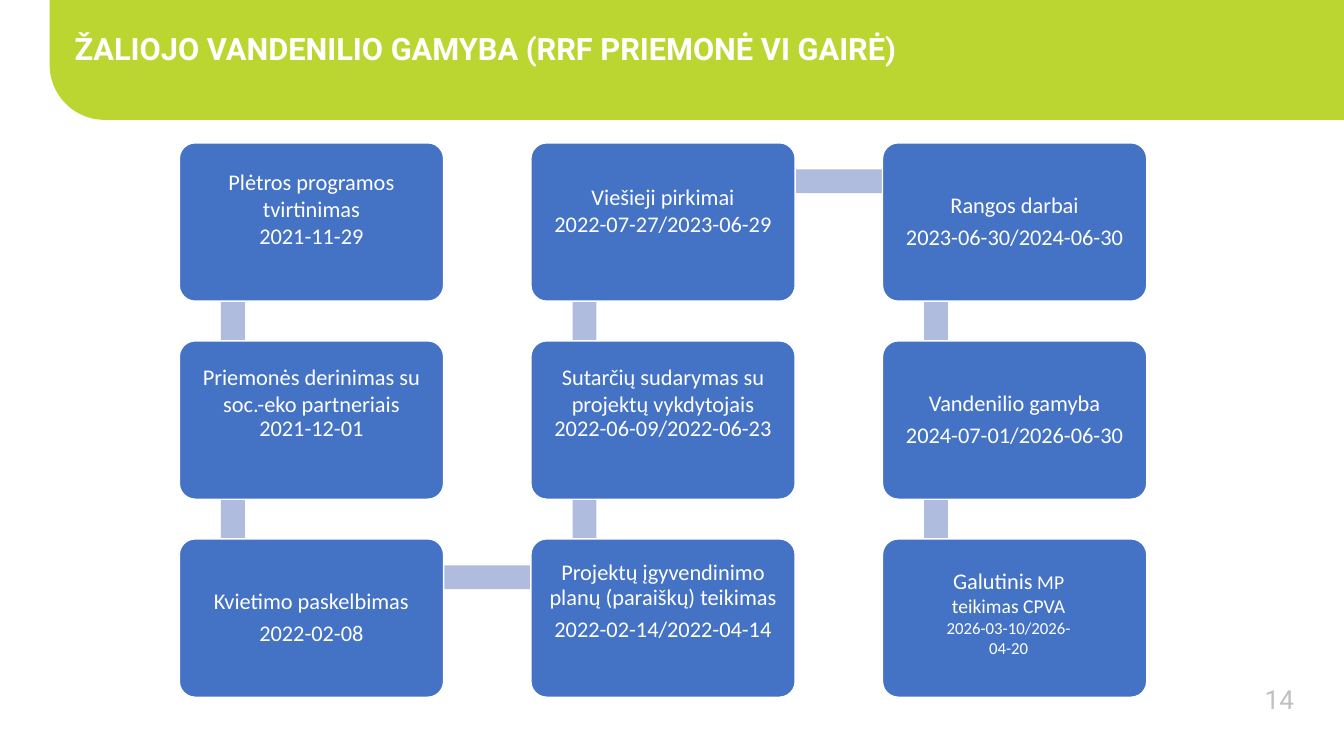
from pptx import Presentation
from pptx.dml.color import RGBColor
from pptx.enum.shapes import MSO_SHAPE
from pptx.enum.text import MSO_ANCHOR, PP_ALIGN
from pptx.util import Cm, Pt

RECT = MSO_SHAPE.RECTANGLE
ROUND = MSO_SHAPE.ROUNDED_RECTANGLE
CORNER = MSO_SHAPE.ROUND_1_RECTANGLE
TOP, MIDDLE = MSO_ANCHOR.TOP, MSO_ANCHOR.MIDDLE
LEFT, CENTER = PP_ALIGN.LEFT, PP_ALIGN.CENTER

LIME, BLUE, PALE = "BCD631", "4472C4", "B0BCDE"
WHITE, GREY = "FFFFFF", "C0C0C0"

ROWS = 3
CARD_W, CARD_H = 6.66, 3.99
STEP_X, STEP_Y = 8.86, 4.99
BAR = 0.6
PIN_X, PIN_Y = 1.35, 0.97  # where links meet inside a card
PAD = 0.18

# Title, date, tight title, tight date, extra space below (cm)
STEPS = [
    ("Plėtros programos tvirtinimas", "2021-11-29", False, False, 0.68),
    ("Priemonės derinimas su soc.-eko partneriais", "2021-12-01",
     False, True, 0.88),
    ("Kvietimo paskelbimas", "2022-02-08", True, True, 0),
    ("Projektų įgyvendinimo planų (paraiškų) teikimas",
     "2022-02-14/2022-04-14", True, True, 0.82),
    ("Sutarčių sudarymas su projektų vykdytojais", "2022-06-09/2022-06-23",
     False, True, 0.88),
    ("Viešieji pirkimai", "2022-07-27/2023-06-29", False, False, 0.62),
    ("Rangos darbai", "2023-06-30/2024-06-30", True, True, 0),
    ("Vandenilio gamyba", "2024-07-01/2026-06-30", True, True, 0),
]
# Last step: each paragraph is a list of (text, size)
FINAL = [
    [("Galutinis", 16), (" MP teikimas CPVA", 14)],
    [("2026-03-10/2026-04-20", 12)],
]


def color(code):
    return RGBColor.from_string(code)


def style(run, size, code=WHITE, font="Calibri", bold=False):
    run.font.size = Pt(size)
    run.font.name = font
    run.font.bold = bold
    run.font.color.rgb = color(code)


def inset(frame, left, top, right, bottom):
    frame.margin_left, frame.margin_top = Cm(left), Cm(top)
    frame.margin_right, frame.margin_bottom = Cm(right), Cm(bottom)


def block(slide, kind, x, y, w, h, fill):
    shape = slide.shapes.add_shape(kind, Cm(x), Cm(y), Cm(w), Cm(h))
    shape.shadow.inherit = False
    shape.fill.solid()
    shape.fill.fore_color.rgb = color(fill)
    shape.line.fill.background()
    return shape


def label(slide, x, y, w, h, text, size, code, bold, align, anchor):
    frame = slide.shapes.add_textbox(Cm(x), Cm(y), Cm(w), Cm(h)).text_frame
    frame.word_wrap = True
    frame.vertical_anchor = anchor
    frame.text = text
    para = frame.paragraphs[0]
    para.alignment = align
    style(para.runs[0], size, code, "Roboto", bold)


def header(slide, x, y, w, h):
    band = block(slide, CORNER, x, y, w, h, LIME)
    band.rotation = 180
    band.adjustments[0] = 0.459
    label(slide, x + 0.38, y + 0.63, w - 0.38, 1.2,
          "ŽALIOJO VANDENILIO GAMYBA (RRF PRIEMONĖ VI GAIRĖ)",
          22, WHITE, True, LEFT, TOP)


def card(slide, x, y):
    shape = block(slide, ROUND, x, y, CARD_W, CARD_H, BLUE)
    shape.adjustments[0] = 0.1
    shape.line.color.rgb = color(WHITE)
    shape.line.width = Pt(1)
    frame = shape.text_frame
    frame.word_wrap = True
    return frame


def stage(slide, x, y, title, date, close, snug, extra):
    frame = card(slide, x, y)
    frame.vertical_anchor = MIDDLE
    inset(frame, PAD, PAD, PAD, PAD + extra)
    frame.text = f"{title}\n{date}"
    for para, tight in zip(frame.paragraphs, (close, snug)):
        para.alignment = CENTER
        if tight:
            para.line_spacing = 0.9
            para.space_after = Pt(5.6)
        style(para.runs[0], 16)


def finish(slide, x, y):
    frame = card(slide, x, y)
    frame.vertical_anchor = TOP
    inset(frame, 1.25, 0.59, 1.55, PAD)
    for i, parts in enumerate(FINAL):
        para = frame.add_paragraph() if i else frame.paragraphs[0]
        para.alignment = CENTER
        for text, size in parts:
            run = para.add_run()
            run.text = text
            style(run, size)


def link(slide, start, end):
    """Bar between the pins of two neighbouring cards."""
    (ax, ay), (bx, by) = start, end
    wide, tall = abs(bx - ax), abs(by - ay)
    x, y = min(ax, bx) + PIN_X, min(ay, by) + PIN_Y
    if wide:
        block(slide, RECT, x, y - BAR / 2, wide, BAR, PALE)
    else:
        block(slide, RECT, x - BAR / 2, y, BAR, tall, PALE)


def flow(slide, x, y):
    # Columns run down, up, down
    spots = []
    for i in range(len(STEPS) + 1):
        col, row = divmod(i, ROWS)
        if col % 2:
            row = ROWS - 1 - row
        spots.append((x + col * STEP_X, y + row * STEP_Y))
    # Links lie behind the cards
    for start, end in zip(spots, spots[1:]):
        link(slide, start, end)
    for spot, step in zip(spots, STEPS):
        stage(slide, *spot, *step)
    finish(slide, *spots[-1])


def main():
    deck = Presentation()
    deck.slide_width, deck.slide_height = Cm(33.87), Cm(19.05)
    slide = deck.slides.add_slide(deck.slide_layouts[6])
    header(slide, 1.25, 0, 32.62, 3.02)
    flow(slide, 4.52, 3.6)
    # Page number
    label(slide, 30.94, 17.1, 2.6, 1.02, "14", 18.7, GREY, False,
          CENTER, MIDDLE)
    deck.save("out.pptx")


if __name__ == "__main__":
    main()
